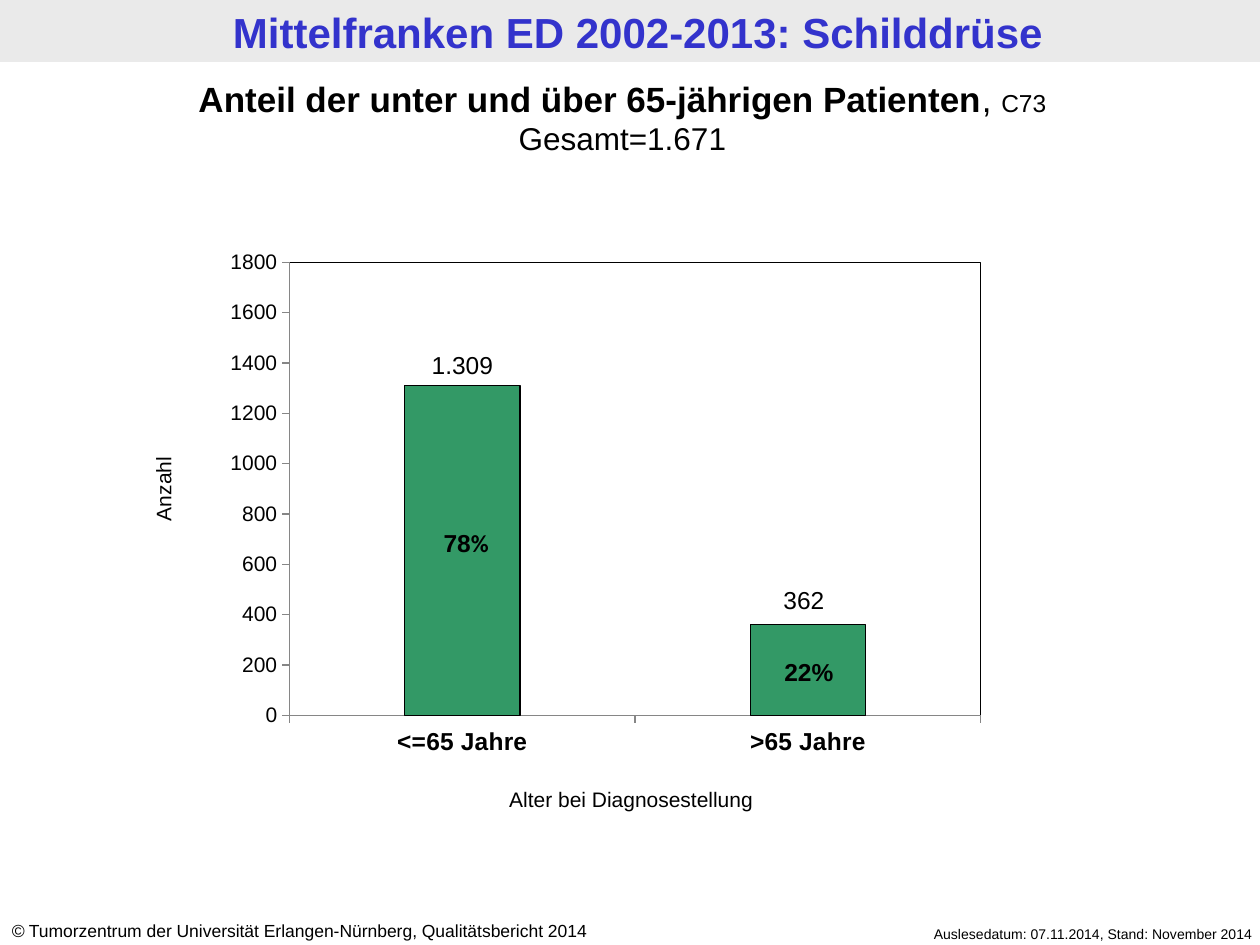
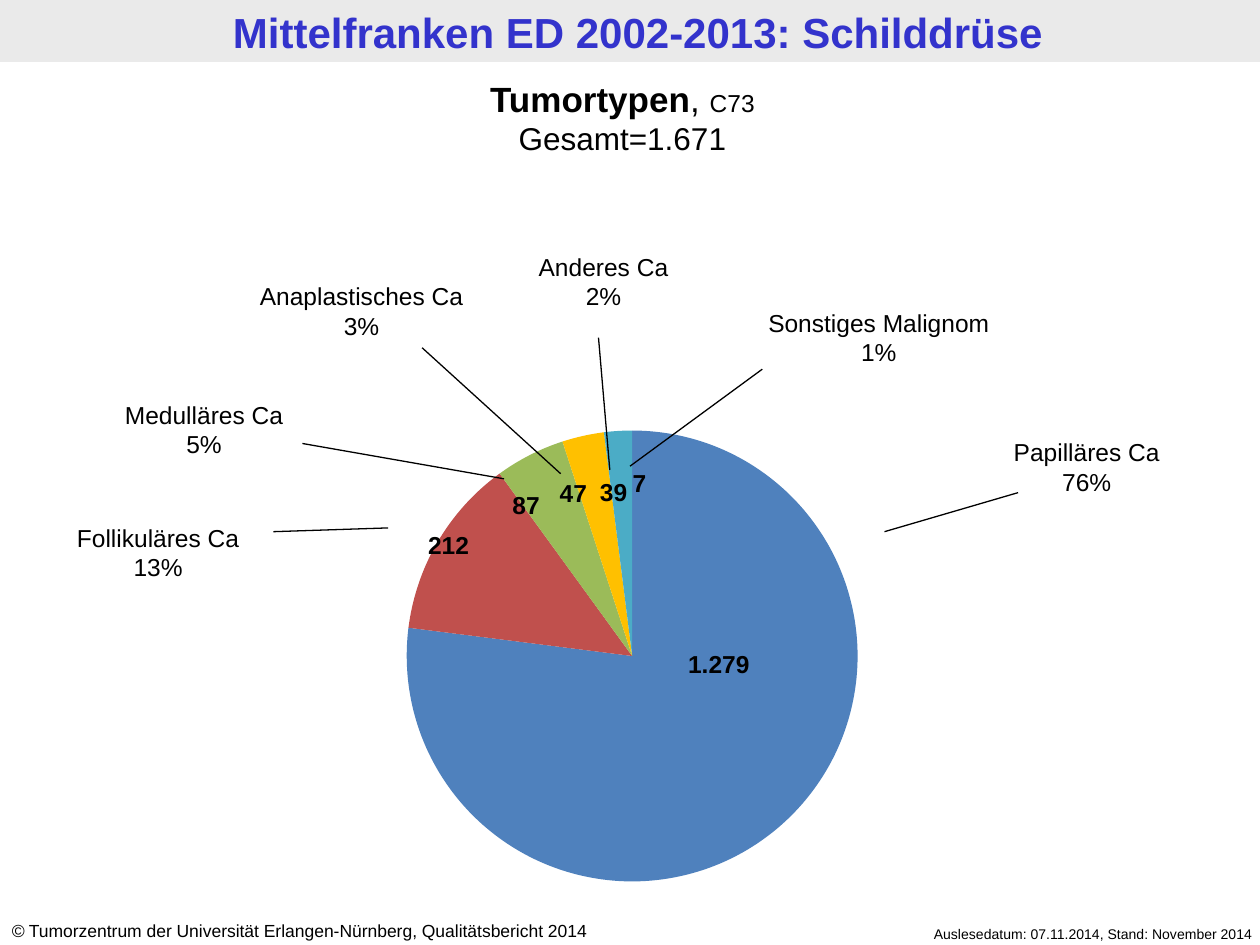
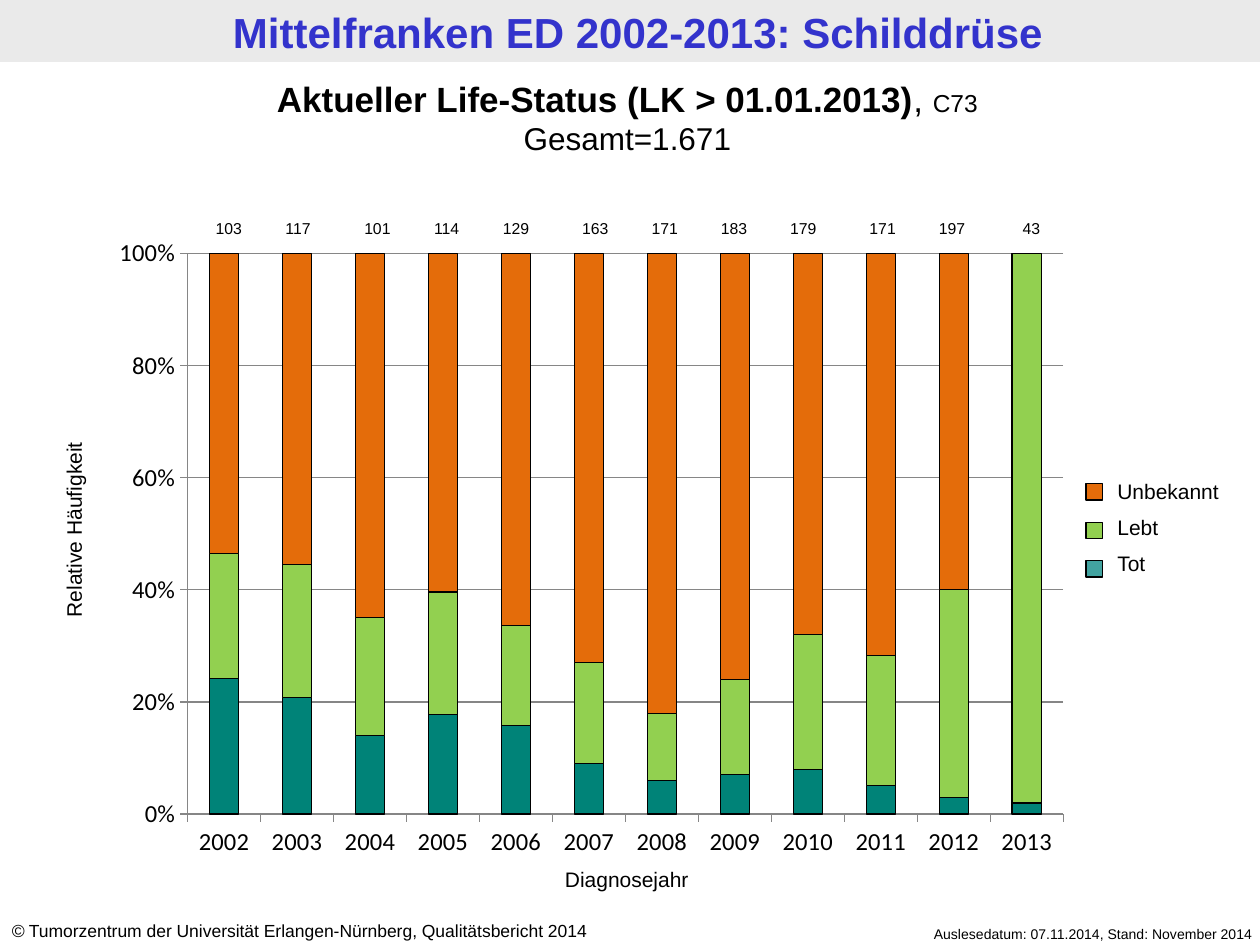
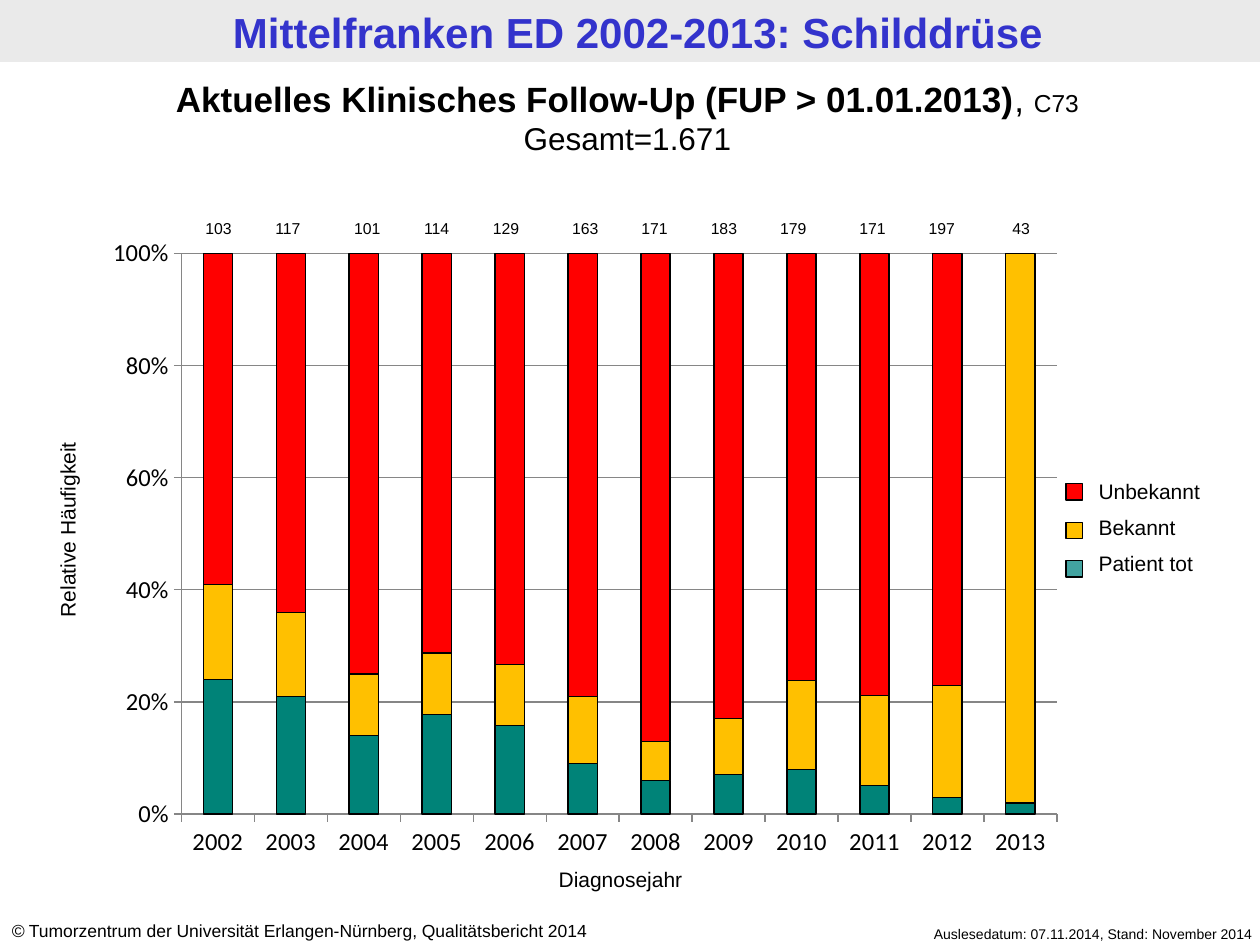
from dataclasses import dataclass
from typing import NamedTuple, Optional, Sequence, Union

import pptx
import pptx.chart.chart
import pptx.chart.data
import pptx.dml.color
import pptx.enum.chart
import pptx.enum.shapes
import pptx.enum.text
import pptx.oxml
import pptx.oxml.ns
import pptx.slide
import pptx.util

qn = pptx.oxml.ns.qn
Align = pptx.enum.text.PP_ALIGN
ChartType = pptx.enum.chart.XL_CHART_TYPE

WIDTH, HEIGHT = pptx.util.Inches(10), pptx.util.Inches(7.5)
COLUMN, ROW = WIDTH // 100, HEIGHT // 75


@dataclass(frozen=True)
class Theme:
    font: str = "Arial"
    chart_font: str = "Calibri"
    black: str = "000000"
    band: str = "EAEAEA"
    title: str = "3333CC"
    axis: str = "868686"
    bar: str = "339966"
    dead: str = "008378"
    dead_key: str = "008380"
    pie: tuple[str, ...] = ("4F81BD", "C0504D", "9BBB59", "FFC000", "4BACC6", "F79646")
    title_size: float = 24
    heading_size: float = 20
    large_size: float = 18
    label_size: float = 14
    axis_size: float = 12
    copyright_size: float = 10
    total_size: float = 9
    date_size: float = 8
    line_width: float = 0.75


THEME = Theme()


class Box(NamedTuple):
    """Left, top, width and height in grid columns and rows."""
    left: float
    top: float
    width: float
    height: float

    def lengths(self) -> tuple[int, int, int, int]:
        return (round(self.left * COLUMN), round(self.top * ROW),
                round(self.width * COLUMN), round(self.height * ROW))


class Run(NamedTuple):
    text: str
    size: Optional[float] = None
    bold: bool = False
    italic: bool = False
    font: str = THEME.font


class Label(NamedTuple):
    text: str
    box: Box
    bold: bool = False


class Slice(NamedTuple):
    """A tumour type with its share, its caption and its pointer line."""
    name: str
    share: int
    percent: str
    caption: Box
    pointer: tuple[float, float, float, float]
    count: Label


class Status(NamedTuple):
    name: str
    color: str
    percentages: tuple[int, ...]


@dataclass(frozen=True)
class StatusSlide:
    heading: str
    chart_left: float
    totals_left: float
    keys_left: float
    legend: Box
    statuses: tuple[Status, ...]


Paragraphs = Sequence[Union[str, Sequence[Run]]]

YEARS = [str(year) for year in range(2002, 2014)]
TOTALS = (103, 117, 101, 114, 129, 163, 171, 183, 179, 171, 197, 43)
WIDER_GAP_BEFORE = (2, 5, 9, 11)
DEAD_PERCENTAGES = (24, 21, 14, 18, 16, 9, 6, 7, 8, 5, 3, 2)

AGE_LABELS = (
    Label("1.309", Box(31.6, 27.3, 10.2, 3.4)),
    Label("362", Box(58.7, 45.9, 10.2, 3.4)),
    Label("22%", Box(59.45, 51.65, 9.5, 3.4), True),
)

SLICES = (
    Slice("Papilläres Ca", 77, "76%", Box(75.2, 34.2, 22.1, 5.7), (70.2, 42.2, 80.8, 39.1),
          Label("1.279", Box(52.9, 51, 8.3, 3.4), True)),
    Slice("Follikuläres Ca", 13, "13%", Box(1.6, 41, 21.9, 5.7), (30.8, 41.9, 21.7, 42.2),
          Label("212", Box(31.45, 41.6, 8.3, 3.4), True)),
    Slice("Medulläres Ca", 5, "5%", Box(3.5, 31.25, 25.4, 5.7), (40, 38, 24, 35.2),
          Label("87", Box(39, 38.4, 5.5, 3.4), True)),
    Slice("Anaplastisches Ca", 3, "3%", Box(18.2, 21.85, 21, 5.7), (44.5, 37.6, 33.5, 27.6),
          Label("47", Box(42.9, 37.45, 5.2, 3.3), True)),
    Slice("Anderes Ca", 2, "2%", Box(37.4, 19.5, 21, 5.7), (48.4, 37.3, 47.5, 26.8),
          Label("39", Box(46.6, 37.4, 4.2, 3.4), True)),
    Slice("Sonstiges Malignom", 0, "1%", Box(58.7, 23.95, 22.1, 5.7), (50, 37, 60.5, 29.3),
          Label("7", Box(48.3, 36.65, 4.9, 3.3), True)),
)

STATUS_SLIDES = (
    StatusSlide(
        "Aktueller Life-Status (LK > 01.01.2013)", 7.95, 15.4, 86.2, Box(87.7, 37.5, 12.3, 9.1),
        (Status("Tot", THEME.dead, DEAD_PERCENTAGES),
         Status("Lebt", "92D050", (22, 24, 21, 22, 18, 18, 12, 17, 24, 23, 37, 98)),
         Status("Unbekannt", "E46C0A", (53, 56, 65, 61, 67, 73, 82, 76, 68, 71, 60, 0)))),
    StatusSlide(
        "Aktuelles Klinisches Follow-Up (FUP > 01.01.2013)", 7.45, 14.6, 84.6,
        Box(86.2, 37.5, 14.2, 9.1),
        (Status("Patient tot", THEME.dead, DEAD_PERCENTAGES),
         Status("Bekannt", "FFC000", (17, 15, 11, 11, 11, 12, 7, 10, 16, 16, 20, 98)),
         Status("Unbekannt", "FF0000", (59, 64, 75, 72, 74, 79, 87, 83, 77, 78, 77, 0)))),
)


def rgb(color: str) -> pptx.dml.color.RGBColor:
    return pptx.dml.color.RGBColor.from_string(color)


def set_line(line, color: str = THEME.black) -> None:
    line.color.rgb = rgb(color)
    line.width = pptx.util.Pt(THEME.line_width)


def set_font(font, size: float, name: str = THEME.font, bold: bool = False,
             italic: bool = False, color: str = THEME.black) -> None:
    font.size = pptx.util.Pt(size)
    font.name = name
    font.bold = bold
    font.italic = italic
    font.color.rgb = rgb(color)


def add_text(slide: pptx.slide.Slide, box: Box, paragraphs: Paragraphs, *,
             size: float = THEME.label_size, bold: bool = False, color: str = THEME.black,
             align: Align = Align.CENTER, rotation: float = 0, space_before: float = 0,
             insets: tuple[float, float] = (0.1, 0.05)) -> None:
    """Write paragraphs, each a plain string or a sequence of runs."""
    shape = slide.shapes.add_textbox(*box.lengths())
    shape.rotation = rotation
    frame = shape.text_frame
    frame.word_wrap = True
    frame.auto_size = pptx.enum.text.MSO_AUTO_SIZE.SHAPE_TO_FIT_TEXT
    frame.margin_left = frame.margin_right = pptx.util.Inches(insets[0])
    frame.margin_top = frame.margin_bottom = pptx.util.Inches(insets[1])
    for index, content in enumerate(paragraphs):
        paragraph = frame.add_paragraph() if index else frame.paragraphs[0]
        paragraph.alignment = align
        if index and space_before:
            paragraph.space_before = pptx.util.Pt(space_before)
        runs = [Run(content, bold=bold)] if isinstance(content, str) else content
        for part in runs:
            run = paragraph.add_run()
            run.text = part.text
            set_font(run.font, part.size or size, part.font, part.bold, part.italic, color)


def add_label(slide: pptx.slide.Slide, label: Label) -> None:
    add_text(slide, label.box, [label.text], bold=label.bold)


def add_rectangle(slide: pptx.slide.Slide, box: Box, color: str, outlined: bool = False,
                  opacity: int = 100) -> None:
    shape = slide.shapes.add_shape(pptx.enum.shapes.MSO_SHAPE.RECTANGLE, *box.lengths())
    shape.shadow.inherit = False
    shape.fill.solid()
    shape.fill.fore_color.rgb = rgb(color)
    if outlined:
        set_line(shape.line)
    else:
        shape.line.fill.background()
    if opacity < 100:
        fill_color = shape.element.spPr.find(f"{qn('a:solidFill')}/{qn('a:srgbClr')}")
        fill_color.append(fill_color.makeelement(qn("a:alpha"), {"val": str(opacity * 1000)}))


def add_pointer(slide: pptx.slide.Slide, ends: tuple[float, float, float, float]) -> None:
    units = (COLUMN, ROW, COLUMN, ROW)
    connector = slide.shapes.add_connector(
        pptx.enum.shapes.MSO_CONNECTOR.STRAIGHT,
        *(round(place * unit) for place, unit in zip(ends, units)))
    set_line(connector.line)
    properties = connector.element.spPr
    properties.append(properties.makeelement(qn("a:effectLst"), {}))


def add_framed_slide(presentation, heading: str, heading_box: Box) -> pptx.slide.Slide:
    """Add a slide with the title band, the heading and both footers."""
    slide = presentation.slides.add_slide(presentation.slide_layouts[6])
    add_rectangle(slide, Box(0, 0, 100, 4.92), THEME.band)
    add_text(slide, Box(0.63, 0.15, 100, 4.9), ["Mittelfranken ED 2002-2013: Schilddrüse"],
             size=THEME.title_size, bold=True, color=THEME.title, insets=(0.09, 0.04))
    add_text(slide, Box(66.5, 72.94, 33.9, 2.4),
             ["Auslesedatum: 07.11.2014, Stand: November 2014"],
             size=THEME.date_size, align=Align.RIGHT)
    copyright_runs = [
        Run("©", italic=True),
        Run(" Tumorzentrum der Universität Erlangen-Nürnberg, Qualitätsbericht 2014")]
    add_text(slide, Box(-0.06, 72.55, 52.4, 2.7), [copyright_runs],
             size=THEME.copyright_size, align=Align.LEFT)
    heading_runs = [Run(heading, bold=True), Run(", "), Run("C73", THEME.label_size)]
    add_text(slide, heading_box, [heading_runs, [Run("Gesamt=1.671", THEME.large_size)]],
             size=THEME.heading_size)
    return slide


def set_plot_area(chart: pptx.chart.chart.Chart, shares: Box, framed: bool = False) -> None:
    """Fix the inner plot area, given as shares of the chart's size."""
    plot_area = chart._chartSpace.find(f"{qn('c:chart')}/{qn('c:plotArea')}")
    for layout in plot_area.findall(qn("c:layout")):
        plot_area.remove(layout)
    places = "".join(f'<c:{key} val="{share}"/>' for key, share in zip("xywh", shares))
    plot_area.insert(0, pptx.oxml.parse_xml(
        f'<c:layout {pptx.oxml.ns.nsdecls("c")}><c:manualLayout>'
        '<c:layoutTarget val="inner"/><c:xMode val="edge"/><c:yMode val="edge"/>'
        f'{places}</c:manualLayout></c:layout>'))
    if framed:
        plot_area.append(pptx.oxml.parse_xml(
            f'<c:spPr {pptx.oxml.ns.nsdecls("c", "a")}><a:noFill/>'
            f'<a:ln w="{pptx.util.Pt(THEME.line_width)}"><a:solidFill>'
            f'<a:srgbClr val="{THEME.black}"/></a:solidFill></a:ln></c:spPr>'))


def add_chart(slide: pptx.slide.Slide, kind: ChartType, box: Box, categories: Sequence[str],
              series: Sequence[tuple[str, Sequence[int]]]) -> pptx.chart.chart.Chart:
    data = pptx.chart.data.CategoryChartData()
    data.categories = categories
    for name, values in series:
        data.add_series(name, values)
    chart = slide.shapes.add_chart(kind, *box.lengths(), data).chart
    chart.has_title = False
    chart.has_legend = False
    set_font(chart.font, THEME.large_size, THEME.chart_font)
    return chart


def style_columns(chart: pptx.chart.chart.Chart, colors: Sequence[str], gap: int,
                  major_unit: float) -> None:
    plot = chart.plots[0]
    plot.gap_width = gap
    plot.overlap = 100
    plot.vary_by_categories = False
    for series, color in zip(plot.series, colors):
        series.format.fill.solid()
        series.format.fill.fore_color.rgb = rgb(color)
        set_line(series.format.line)
    for axis in (chart.category_axis, chart.value_axis):
        axis.major_tick_mark = pptx.enum.chart.XL_TICK_MARK.OUTSIDE
        axis.minor_tick_mark = pptx.enum.chart.XL_TICK_MARK.NONE
        set_line(axis.format.line, THEME.axis)
        set_font(axis.tick_labels.font, THEME.label_size, THEME.chart_font)
    chart.value_axis.major_unit = major_unit
    chart.value_axis.has_major_gridlines = False


def add_axis_titles(slide: pptx.slide.Slide, horizontal: Label, vertical: Label) -> None:
    for title, rotation in ((horizontal, 0), (vertical, 270)):
        add_text(slide, title.box, [title.text], size=THEME.axis_size, rotation=rotation)


def build_age_slide(presentation) -> None:
    slide = add_framed_slide(presentation, "Anteil der unter und über 65-jährigen Patienten",
                             Box(0, 5.65, 98.8, 7.4))
    chart = add_chart(slide, ChartType.COLUMN_STACKED, Box(15.1, 14.2, 69.8, 46.6),
                      ["<=65 Jahre", ">65 Jahre"], [("Anzahl", (1310, 360))])
    style_columns(chart, [THEME.bar], 200, 200)
    set_plot_area(chart, Box(0.113, 0.142, 0.786, 0.772), framed=True)
    chart.value_axis.minimum_scale = 0
    chart.value_axis.maximum_scale = 1800
    set_font(chart.category_axis.tick_labels.font, THEME.label_size, bold=True)
    set_font(chart.value_axis.tick_labels.font, THEME.axis_size)
    add_axis_titles(slide, Label("Alter bei Diagnosestellung", Box(33.45, 61.9, 33.3, 3)),
                    Label("Anzahl", Box(-0.1, 37.3, 26.1, 3)))
    add_text(slide, Box(32.65, 41.4, 8.7, 3.4),
             [[Run("78", bold=True), Run("%", bold=True, font=THEME.chart_font)]])
    for label in AGE_LABELS:
        add_label(slide, label)


def build_type_slide(presentation) -> None:
    slide = add_framed_slide(presentation, "Tumortypen", Box(0, 5.65, 98.8, 7.4))
    chart = add_chart(slide, ChartType.PIE, Box(24, 32.85, 52.4, 38.6),
                      [str(number) for number in range(1, len(SLICES) + 1)],
                      [("Anteil", [part.share for part in SLICES])])
    set_plot_area(chart, Box(0.158, 0.034, 0.683, 0.928))
    for index, color in enumerate(THEME.pie):
        point_format = chart.plots[0].series[0].points[index].format
        point_format.fill.solid()
        point_format.fill.fore_color.rgb = rgb(color)
        point_format.line.fill.background()
    for part in SLICES:
        add_label(slide, part.count)
        add_pointer(slide, part.pointer)
        add_text(slide, part.caption, [part.name, part.percent])


def build_status_slide(presentation, content: StatusSlide) -> None:
    slide = add_framed_slide(presentation, content.heading, Box(-0.4, 5.65, 100.4, 7.4))
    left = content.chart_left
    chart = add_chart(slide, ChartType.COLUMN_STACKED_100, Box(left, 17.92, 78, 51.1), YEARS,
                      [(status.name, status.percentages) for status in content.statuses])
    style_columns(chart, [status.color for status in content.statuses], 150, 0.2)
    set_plot_area(chart, Box(0.089, 0.043, 0.891, 0.871))
    chart.value_axis.has_major_gridlines = True
    set_line(chart.value_axis.major_gridlines.format.line, THEME.axis)
    chart.value_axis.tick_labels.number_format = "0%"
    chart.value_axis.tick_labels.number_format_is_linked = False
    add_axis_titles(slide, Label("Diagnosejahr", Box(left + 30.55, 68.25, 22.5, 3.1)),
                    Label("Relative Häufigkeit", Box(left - 14.1, 40.5, 24.1, 3.1)))

    total_left = content.totals_left
    for index, total in enumerate(TOTALS):
        if index in WIDER_GAP_BEFORE:
            total_left += 0.8
        add_text(slide, Box(total_left, 16.85, 5.5, 2.5), [str(total)], size=THEME.total_size)
        total_left += 5.5

    legend = content.statuses[::-1]
    add_text(slide, content.legend, [status.name for status in legend],
             size=THEME.axis_size, align=Align.LEFT, space_before=6)
    for row, status in enumerate(legend):
        is_dead = status.color == THEME.dead
        add_rectangle(slide, Box(content.keys_left, 38.4 + 3.05 * row, 1.3, 1.3),
                      THEME.dead_key if is_dead else status.color,
                      outlined=True, opacity=74 if is_dead else 100)


def main() -> None:
    presentation = pptx.Presentation()
    presentation.slide_width, presentation.slide_height = WIDTH, HEIGHT
    build_age_slide(presentation)
    build_type_slide(presentation)
    for content in STATUS_SLIDES:
        build_status_slide(presentation, content)
    presentation.save("out.pptx")


if __name__ == "__main__":
    main()
